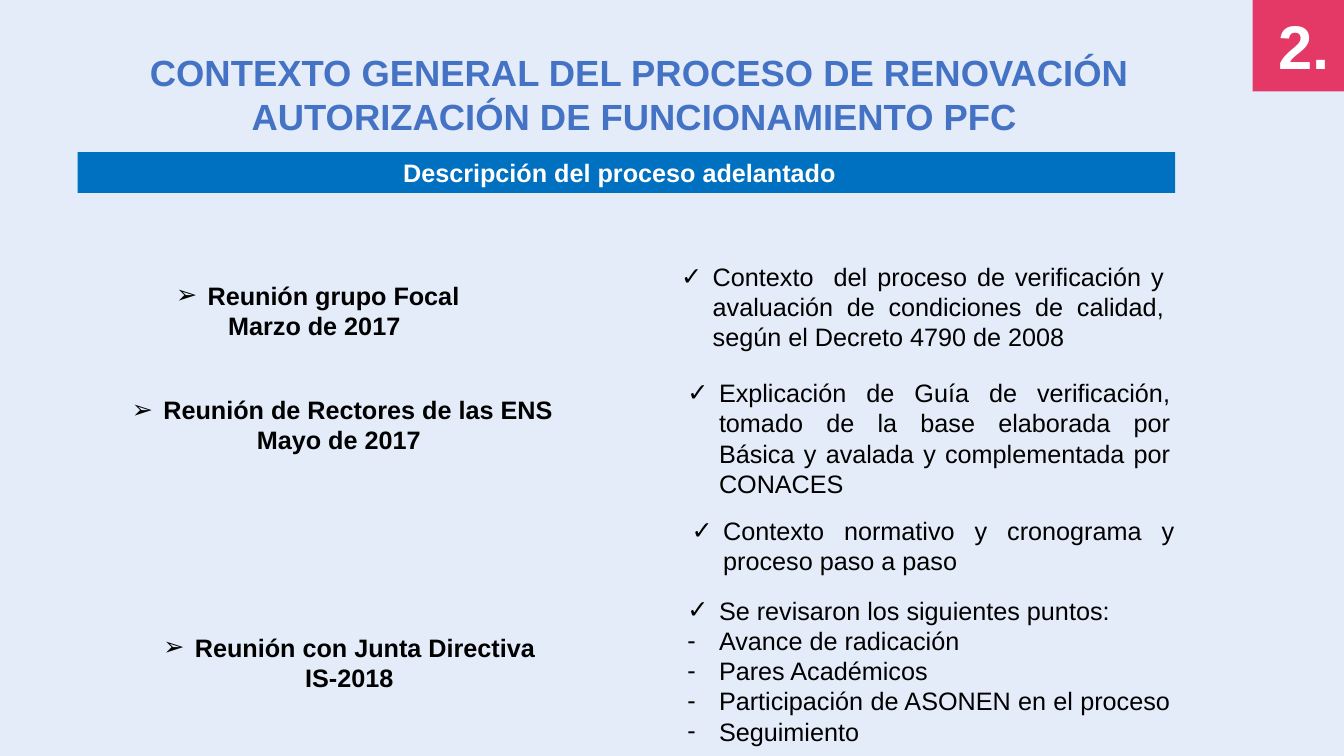
from lxml import etree
from pptx import Presentation
from pptx.dml.color import RGBColor
from pptx.enum.shapes import MSO_SHAPE
from pptx.enum.text import MSO_ANCHOR, PP_ALIGN
from pptx.oxml.ns import qn
from pptx.util import Pt

RECTANGLE = MSO_SHAPE.RECTANGLE
MIDDLE, TOP = MSO_ANCHOR.MIDDLE, MSO_ANCHOR.TOP
LEFT, CENTER, JUSTIFY = PP_ALIGN.LEFT, PP_ALIGN.CENTER, PP_ALIGN.JUSTIFY

COLORS = {
    "background": "E3ECF8",
    "badge": "E43866",
    "banner": "0070C0",
    "title": "4472C4",
    "white": "FFFFFF",
    "black": "000000",
}
FONT = "Arial"
INDENT = 22.5
COLUMN_WIDTH = 359
LINE_HEIGHT = 21.6
PADDING = 7.4
ARROW, CHECK, DASH = "➢", "✓", "-"

# left, top, name, date
MEETINGS = [
    (47.5, 196.5, "Reunión grupo Focal", "Marzo de 2017 "),
    (65, 278, "Reunión de Rectores de las ENS", "Mayo de 2017 "),
    (70, 448, "Reunión con Junta Directiva", "IS-2018"),
]

# left, top, line count, checked point, dashed sub-points
TOPICS = [
    (479.5, 183, 3, "Contexto  del proceso de verificación y avaluación de condiciones "
                    "de calidad, según el Decreto 4790 de 2008 ", []),
    (484, 266, 4, "Explicación de Guía de verificación, tomado de la base elaborada por "
                  "Básica y avalada y complementada por CONACES ", []),
    (487, 364.5, 2, "Contexto normativo y cronograma y proceso paso a paso ", []),
    (484, 421.5, 5, "Se revisaron los siguientes puntos: ",
     ["Avance de radicación", "Pares Académicos ",
      "Participación de ASONEN en el proceso ", "Seguimiento "]),
]


def rgb(name):
    return RGBColor.from_string(COLORS[name])


def set_bullet(paragraph, character):
    """Give the paragraph a bullet with a hanging indent."""
    properties = paragraph._p.get_or_add_pPr()
    properties.set("marL", str(Pt(INDENT)))
    properties.set("indent", str(-Pt(INDENT)))
    etree.SubElement(properties, qn("a:buFont")).set("typeface", FONT)
    etree.SubElement(properties, qn("a:buChar")).set("char", character)


def write(shape, lines, size=18, color="black", bold=False, align=LEFT, anchor=TOP):
    """Fill a shape with (bullet or None, text) lines."""
    frame = shape.text_frame
    frame.word_wrap = True
    frame.vertical_anchor = anchor
    for index, (bullet, text) in enumerate(lines):
        paragraph = frame.add_paragraph() if index else frame.paragraphs[0]
        paragraph.alignment = align
        if bullet:
            set_bullet(paragraph, bullet)
        run = paragraph.add_run()
        run.text = text
        run.font.name = FONT
        run.font.size = Pt(size)
        run.font.bold = bold
        run.font.color.rgb = rgb(color)


def add_text(slide, left, top, width, height, lines, **text_format):
    box = slide.shapes.add_textbox(Pt(left), Pt(top), Pt(width), Pt(height))
    write(box, lines, **text_format)


def add_block(slide, left, top, width, height, color):
    block = slide.shapes.add_shape(RECTANGLE, Pt(left), Pt(top), Pt(width), Pt(height))
    block.shadow.inherit = False
    block.fill.solid()
    block.fill.fore_color.rgb = rgb(color)
    block.line.fill.background()
    return block


def add_column_text(slide, left, top, line_count, lines, **text_format):
    height = line_count * LINE_HEIGHT + PADDING
    add_text(slide, left, top, COLUMN_WIDTH, height, lines, **text_format)


def main():
    presentation = Presentation()
    presentation.slide_width = Pt(960)
    presentation.slide_height = Pt(540)
    slide = presentation.slides.add_slide(presentation.slide_layouts[6])
    slide.background.fill.solid()
    slide.background.fill.fore_color.rgb = rgb("background")

    add_block(slide, 894.75, 0, 65.25, 65.25, "badge")
    add_text(slide, 906, 2, 54.5, 60.5, [(None, "2.")], size=44, color="white", bold=True)
    add_text(slide, 65, 32.5, 784, 70.5,
             [(None, "CONTEXTO GENERAL DEL PROCESO DE RENOVACIÓN "
                     "AUTORIZACIÓN DE FUNCIONAMIENTO PFC ")],
             size=26, color="title", bold=True, align=CENTER)

    banner = add_block(slide, 55.5, 108.75, 784, 29, "banner")
    write(banner, [(None, "Descripción del proceso adelantado  ")],
          color="white", bold=True, align=CENTER, anchor=MIDDLE)

    for left, top, name, date in MEETINGS:
        add_column_text(slide, left, top, 2, [(ARROW, name), (None, date)],
                        bold=True, align=CENTER)

    for left, top, line_count, point, details in TOPICS:
        lines = [(CHECK, point)] + [(DASH, detail) for detail in details]
        add_column_text(slide, left, top, line_count, lines, align=JUSTIFY)

    presentation.save("out.pptx")


if __name__ == "__main__":
    main()
